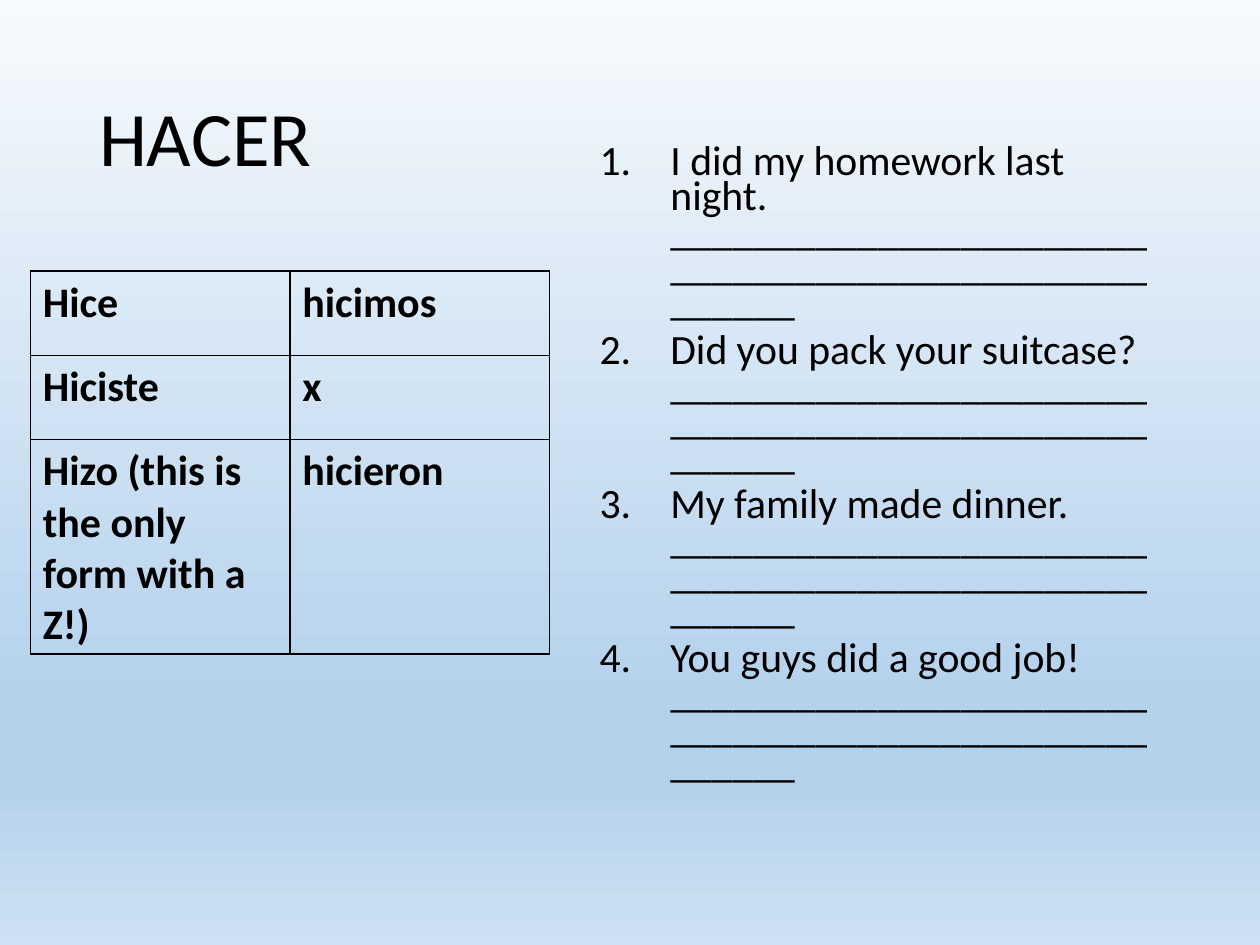
from lxml import etree
from pptx import Presentation
from pptx.dml.color import RGBColor
from pptx.enum.text import MSO_ANCHOR
from pptx.oxml import parse_xml
from pptx.oxml.ns import nsdecls, qn
from pptx.util import Pt

MIDDLE, TOP = MSO_ANCHOR.MIDDLE, MSO_ANCHOR.TOP
BLANK_LAYOUT = 6
BLACK = "000000"
SKY_STOPS = [(0, "F7FAFD"), (74, "B5D2EC"), (83, "B5D2EC"), (100, "CEE1F2")]
TITLE_BOX = (49.5, 28.8, 620.64, 104.4)
TABLE_BOX = (17.28, 154.8, 296.64, 218.88)
EXERCISE_BOX = (335.52, 80.64, 334.8, 406.08)
ROW_HEIGHTS = [48.24, 48.24, 122.4]
FORMS = [
    ("Hice", "hicimos"),
    ("Hiciste", "x"),
    ("Hizo (this is the only form with a Z!)", "hicieron"),
]
SENTENCES = [
    "I did my homework last night.",
    "Did you pack your suitcase?",
    "My family made dinner.",
    "You guys did a good job!",
]
ANSWER_LINE = "_" * 52
NUMBER_INDENT = 40.5


def color(code):
    """Turn a hex string into a colour."""
    return RGBColor.from_string(code)


def set_all(target, values):
    """Set every attribute named in a dict."""
    for name, value in values.items():
        setattr(target, name, value)


def write(para, text, size, bold=False):
    """Add one formatted span to a paragraph."""
    span = para.add_run()
    span.text = text
    set_all(span.font, {"name": "Calibri", "size": Pt(size), "bold": bold})
    span.font.color.rgb = color(BLACK)


def add_text_frame(page, box, anchor):
    """Add a wrapping text box and return its frame."""
    frame = page.shapes.add_textbox(*map(Pt, box)).text_frame
    set_all(frame, {"word_wrap": True, "vertical_anchor": anchor})
    return frame


def paint_background(page):
    """Fill the page with the vertical sky gradient."""
    fill = page.background.fill
    fill.gradient()
    fill.gradient_angle = 270
    stops = page.element.find(".//" + qn("a:gsLst"))
    for stop in list(stops):
        stops.remove(stop)
    for percent, code in SKY_STOPS:
        stop = etree.SubElement(stops, qn("a:gs"), pos=str(percent * 1000))
        etree.SubElement(stop, qn("a:srgbClr"), val=code)


def add_title(page, box):
    """Add the verb as the heading."""
    para = add_text_frame(page, box, MIDDLE).paragraphs[0]
    para.line_spacing = 0.9
    write(para, "HACER", 44)


def outline_cell(cell):
    """Draw a thin black border on each side of a cell."""
    properties = cell._tc.get_or_add_tcPr()
    for position, side in enumerate(("lnL", "lnR", "lnT", "lnB")):
        border = parse_xml(
            f'<a:{side} {nsdecls("a")} w="{Pt(1)}"><a:solidFill>'
            f'<a:srgbClr val="{BLACK}"/></a:solidFill></a:{side}>'
        )
        properties.insert(position, border)


def add_conjugation_table(page, box):
    """Add the table of verb forms."""
    table = page.shapes.add_table(len(FORMS), 2, *map(Pt, box)).table
    set_all(table, {"first_row": False, "horz_banding": False})
    for row, height, forms in zip(table.rows, ROW_HEIGHTS, FORMS):
        row.height = Pt(height)
        for cell, form in zip(row.cells, forms):
            cell.fill.background()
            outline_cell(cell)
            write(cell.text_frame.paragraphs[0], form, 24, bold=True)


def number_paragraph(para):
    """Give a paragraph a hanging automatic number."""
    properties = para._p.get_or_add_pPr()
    properties.set("marL", str(Pt(NUMBER_INDENT)))
    properties.set("indent", str(-Pt(NUMBER_INDENT)))
    etree.SubElement(properties, qn("a:buFont"), typeface="+mj-lt")
    etree.SubElement(properties, qn("a:buAutoNum"), type="arabicPeriod")


def add_exercises(page, box):
    """Add the numbered sentences with their answer lines."""
    frame = add_text_frame(page, box, TOP)
    for index, sentence in enumerate(SENTENCES):
        para = frame.add_paragraph() if index else frame.paragraphs[0]
        set_all(para, {"line_spacing": 0.7, "space_before": Pt(8)})
        number_paragraph(para)
        write(para, f"{sentence} {ANSWER_LINE}", 23.8)


def main():
    """Build and save the deck."""
    deck = Presentation()
    set_all(deck, {"slide_width": Pt(720), "slide_height": Pt(540)})
    page = deck.slides.add_slide(deck.slide_layouts[BLANK_LAYOUT])
    paint_background(page)
    add_title(page, TITLE_BOX)
    add_conjugation_table(page, TABLE_BOX)
    add_exercises(page, EXERCISE_BOX)
    deck.save("out.pptx")


if __name__ == "__main__":
    main()
